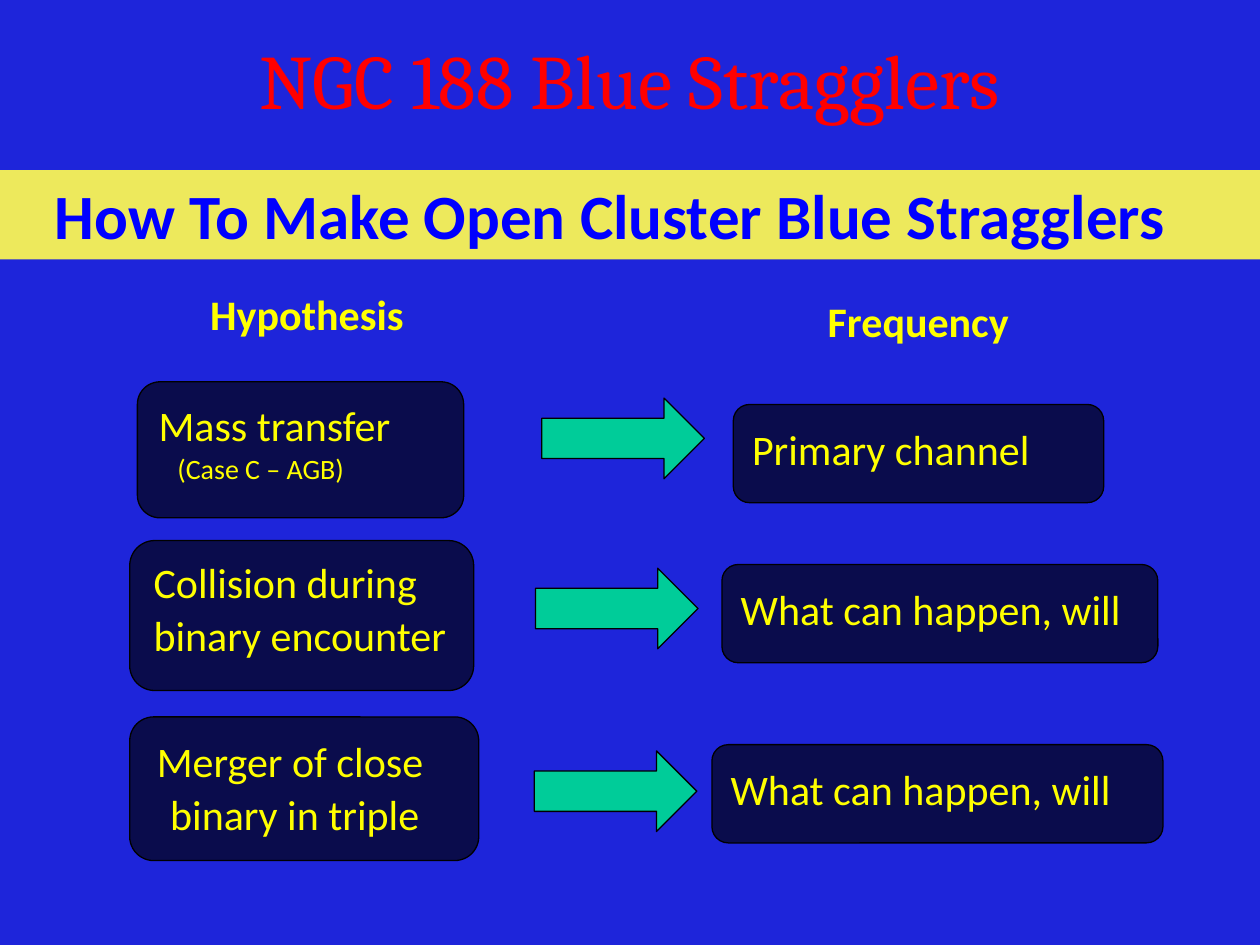
from lxml import etree
from pptx import Presentation
from pptx.dml.color import RGBColor
from pptx.enum.shapes import MSO_SHAPE as Preset
from pptx.enum.text import MSO_ANCHOR as Anchor, MSO_AUTO_SIZE as AutoSize, PP_ALIGN as Align
from pptx.oxml.ns import qn
from pptx.util import Inches, Pt

COLORS = {
    "background": "1E25DA",
    "title": "FF0000",
    "banner": "EDE95C",
    "banner_text": "0000FF",
    "text": "FFFF00",
    "black": "000000",
    "arrow": "00CC99",
}
CARD_OPACITY = 65
BODY = {"size": Pt(24), "name": "Calibri", "bold": False}
HEADING = {**BODY, "bold": True}
DETAIL = {**BODY, "size": Pt(16)}
BANNER = {**HEADING, "size": Pt(36)}
TITLE = {"size": Pt(44), "name": "Cambria", "bold": False}


def color(name):
    return RGBColor.from_string(COLORS[name])


def inches(box):
    return [Inches(value) for value in box]


def write(frame, lines, tint="text", align=Align.LEFT, **frame_format):
    for name, value in {"word_wrap": True, **frame_format}.items():
        setattr(frame, name, value)
    for index, (text, font_format, indent) in enumerate(lines):
        para = frame.paragraphs[0] if index == 0 else frame.add_paragraph()
        para.alignment = align
        if index:
            para.space_before = Pt(1.2)
        if indent:
            para._p.get_or_add_pPr().set("marL", str(Inches(indent)))
        span = para.add_run()
        span.text = text
        for name, value in font_format.items():
            setattr(span.font, name, value)
        span.font.color.rgb = color(tint)


def add_text(shapes, box, lines, **options):
    write(shapes.add_textbox(*inches(box)).text_frame, lines, **options)


def add_preset(shapes, preset, box, fill, outlined=True):
    shape = shapes.add_shape(preset, *inches(box))
    shape.shadow.inherit = False
    shape.fill.solid()
    shape.fill.fore_color.rgb = color(fill)
    if outlined:
        shape.line.color.rgb = color("black")
        shape.line.width = Pt(0.75)
    else:
        shape.line.fill.background()
    return shape


def add_banner(page, box, text):
    band = add_preset(page.shapes, Preset.RECTANGLE, box, "banner", outlined=False)
    write(band.text_frame, [(text, BANNER, 0)], tint="banner_text", align=Align.CENTER,
          margin_right=Inches(0.3), vertical_anchor=Anchor.TOP)


def add_heading(page, box, text):
    add_text(page.shapes, box, [(text, HEADING, 0)], word_wrap=False,
             auto_size=AutoSize.SHAPE_TO_FIT_TEXT)


def add_card(page, box, text_box, lines, align=Align.LEFT):
    left, top, _, _ = box
    shift_x, shift_y, width, height = text_box
    group = page.shapes.add_group_shape()
    card = add_preset(group.shapes, Preset.ROUNDED_RECTANGLE, box, "black")
    fill_color = card._element.spPr.find(qn("a:solidFill"))[0]
    etree.SubElement(fill_color, qn("a:alpha"), val=str(CARD_OPACITY * 1000))
    add_text(group.shapes, (left + shift_x, top + shift_y, width, height), lines, align=align)


def add_row(page, hypothesis, arrow_at, frequency):
    add_card(page, *hypothesis)
    add_preset(page.shapes, Preset.RIGHT_ARROW, (*arrow_at, 1.29, 0.64), "arrow")
    box, text = frequency
    add_card(page, box, (0.05, 0.1, 3.91, 1), [(text, BODY, 0)])


def build_slide(deck):
    page = deck.slides.add_slide(deck.slide_layouts[6])
    page.background.fill.solid()
    page.background.fill.fore_color.rgb = color("background")
    add_text(page.shapes, (0, 0, 10, 1.25), [("NGC 188 Blue Stragglers", TITLE, 0)],
             tint="title", align=Align.CENTER, vertical_anchor=Anchor.MIDDLE)
    add_banner(page, (0, 1.35, 10, 0.71), "How To Make Open Cluster Blue Stragglers ")
    add_heading(page, (1.57, 2.24, 1.83, 0.5), "Hypothesis")
    add_heading(page, (6.47, 2.3, 1.72, 0.5), "Frequency")

    rows = [
        (((1.09, 3.03, 2.59, 1.08), (0.07, 0.09, 3.91, 1),
          [("Mass transfer", BODY, 0), ("(Case C – AGB)", DETAIL, 0.15)]),
         (4.3, 3.16),
         ((5.82, 3.21, 2.94, 0.78), "Primary channel")),
        (((1.03, 4.29, 2.73, 1.19), (0.09, 0.08, 4.11, 1.03),
          [("Collision during", BODY, 0), ("binary encounter", BODY, 0)]),
         (4.25, 4.51),
         ((5.73, 4.48, 3.46, 0.78), "What can happen, will")),
        (((1.03, 5.69, 2.77, 1.14), (-0.45, 0.1, 3.52, 1),
          [("Merger of close ", BODY, 0), ("binary in triple", BODY, 0)], Align.CENTER),
         (4.24, 5.96),
         ((5.65, 5.91, 3.58, 0.78), "What can happen, will")),
    ]
    for row in rows:
        add_row(page, *row)


def main():
    deck = Presentation()
    deck.slide_width, deck.slide_height = Inches(10), Inches(7.5)
    build_slide(deck)
    deck.save("out.pptx")


if __name__ == "__main__":
    main()
